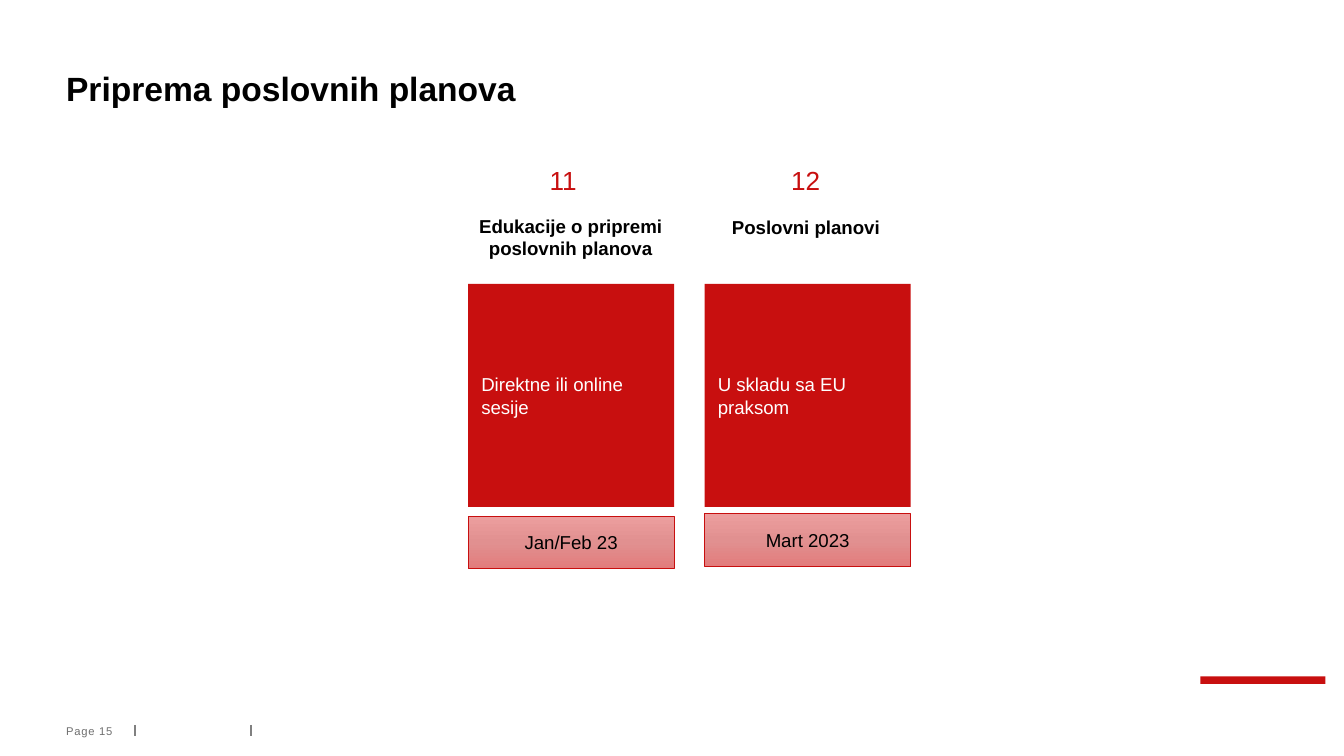
from copy import deepcopy

from lxml import etree
from pptx import Presentation
from pptx import util as u
from pptx.dml.color import RGBColor
from pptx.enum import shapes, text
from pptx.oxml.ns import qn

RED = RGBColor(0xC8, 0x0F, 0x0F)
BLACK = RGBColor(0, 0, 0)
WHITE = RGBColor(0xFF, 0xFF, 0xFF)
GREY = RGBColor(0x6F, 0x6F, 0x6F)
RULE_GREY = RGBColor(0x80, 0x80, 0x80)
BAND = (RGBColor(0xEC, 0x9E, 0x9E), RGBColor(0xE1, 0x90, 0x90), RGBColor(0xE2, 0x7C, 0x7C))

COLS, ROWS = 100, 56.25
CELL = u.Inches(0.1)
MARGIN = 4.92
CARD_LEFT, CARD_W, CARD_STEP = 34.83, 15.33, 17.6

STEPS = [
    dict(number="11", number_box=(39.9, 11.74, 4, 3.4),
         heading="Edukacije o pripremi poslovnih planova",
         heading_box=(33.7, 15.5, 17.5, 4.4),
         detail="Direktne ili online sesije", date="Jan/Feb 23", date_row=38.4),
    dict(number="12", number_box=(57.84, 11.74, 4.2, 3.4),
         heading="Poslovni planovi", heading_box=(52.85, 15.6, 14.2, 2.7),
         detail="U skladu sa EU praksom", date="Mart 2023", date_row=38.24),
]


def grid(*cells):
    return [round(c * CELL) for c in cells]


def write(sp, words, size, color, bold=False, align=text.PP_ALIGN.LEFT,
          anchor=text.MSO_ANCHOR.TOP, wrap=True):
    tf = sp.text_frame
    tf.word_wrap = wrap
    tf.vertical_anchor = anchor
    p = tf.paragraphs[0]
    p.alignment = align
    r = p.add_run()
    r.text = words
    r.font.name = "Arial"
    r.font.size = u.Pt(size)
    r.font.bold = bold
    r.font.color.rgb = color
    return p


def add_label(s, box, words, size, color, inset=None, **style):
    sp = s.shapes.add_textbox(*grid(*box))
    if inset is not None:
        tf = sp.text_frame
        tf.margin_left = tf.margin_top = tf.margin_bottom = 0
        tf.margin_right = u.Inches(inset)
    return write(sp, words, size, color, **style)


def add_block(s, box):
    sp = s.shapes.add_shape(shapes.MSO_SHAPE.RECTANGLE, *grid(*box))
    sp.shadow.inherit = False
    sp.fill.solid()
    sp.fill.fore_color.rgb = RED
    sp.line.fill.background()
    return sp


def add_date(s, box, words):
    sp = add_block(s, box)
    sp.line.color.rgb = RED
    sp.line.width = u.Pt(0.5)
    sp.fill.gradient()
    sp.fill.gradient_angle = 270
    first = sp._element.spPr.find(".//" + qn("a:gs"))
    first.addnext(deepcopy(first))
    for stop, color, position in zip(sp.fill.gradient_stops, BAND, (0, 0.5, 1)):
        stop.color.rgb = color
        stop.position = position
    write(sp, words, 10, BLACK, align=text.PP_ALIGN.CENTER, anchor=text.MSO_ANCHOR.MIDDLE)


def add_rule(s, col, top, bottom):
    line = s.shapes.add_connector(shapes.MSO_CONNECTOR.STRAIGHT, *grid(col, top, col, bottom))
    line.line.color.rgb = RULE_GREY
    line.line.width = u.Pt(0.75)
    etree.SubElement(line._element.spPr, qn("a:effectLst"))


def add_step(s, i, step):
    left = CARD_LEFT + i * CARD_STEP
    card = add_block(s, (left, 21.13, CARD_W, 16.6))
    write(card, step["detail"], 10, WHITE, anchor=text.MSO_ANCHOR.MIDDLE)
    add_label(s, step["number_box"], step["number"], 14, RED,
              align=text.PP_ALIGN.CENTER, wrap=False)
    add_label(s, step["heading_box"], step["heading"], 10, BLACK,
              bold=True, align=text.PP_ALIGN.CENTER)
    add_date(s, (left, step["date_row"], CARD_W, 3.93), step["date"])


def add_frame(s):
    add_block(s, (89.32, 50.32, 9.3, 0.57))
    for col in (18.67, 10.04):
        add_rule(s, col, 53.94, 54.8)
    title = add_label(s, (MARGIN, 2.2, 93.7, 5.9), "Priprema poslovnih planova", 18, BLACK,
                      inset=0.08, bold=True, anchor=text.MSO_ANCHOR.BOTTOM)
    title.line_spacing = 0.9
    page = add_label(s, (MARGIN, 53.9, 4.9, 1), "Page 15", 6, GREY,
                     inset=0, anchor=text.MSO_ANCHOR.MIDDLE)
    page.runs[0].font._element.set("spc", "40")


def main():
    prs = Presentation()
    prs.slide_width, prs.slide_height = grid(COLS, ROWS)
    s = prs.slides.add_slide(prs.slide_layouts[6])
    add_frame(s)
    for i, step in enumerate(STEPS):
        add_step(s, i, step)
    prs.save("out.pptx")


if __name__ == "__main__":
    main()
